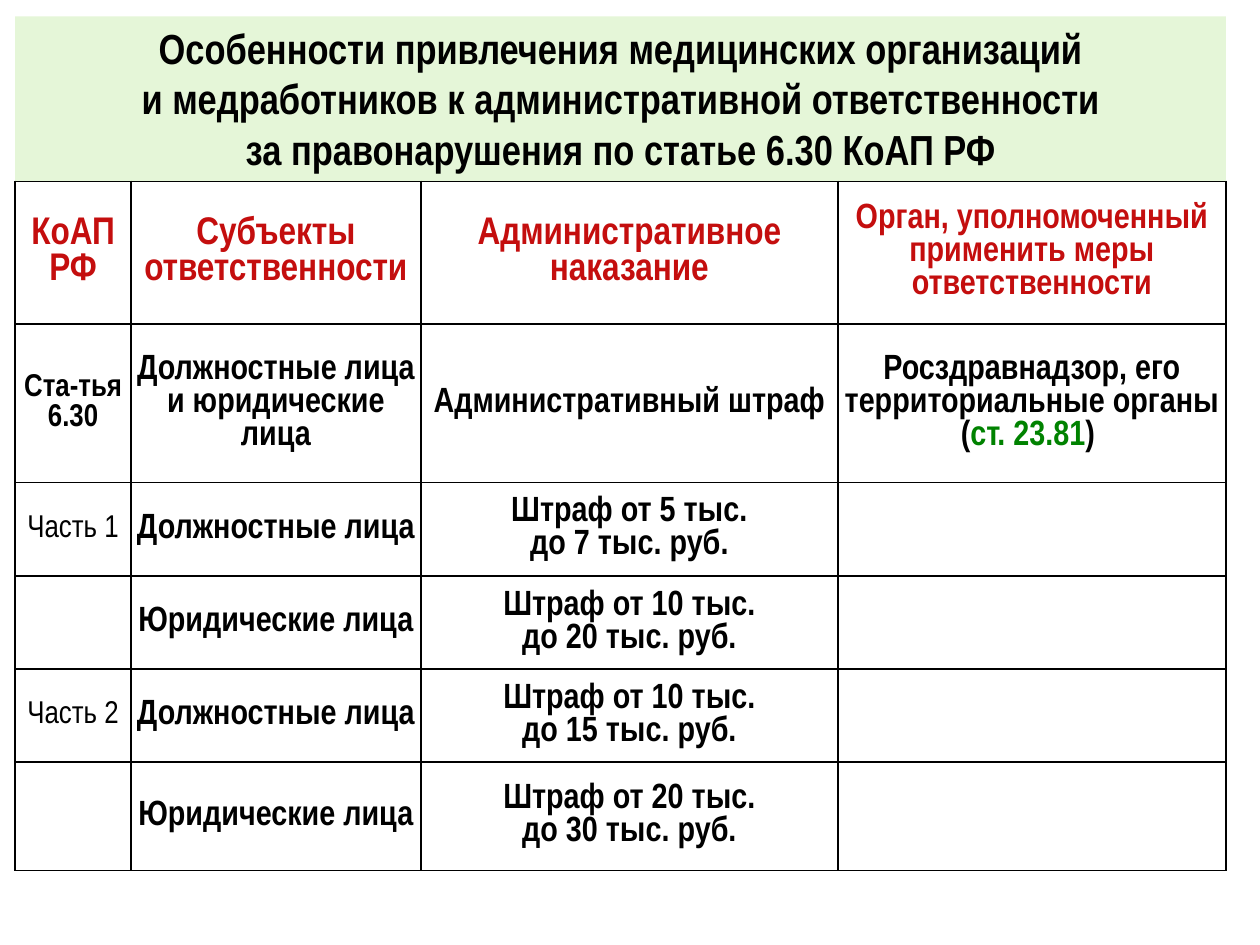
"""Build a slide on administrative liability under article 6.30."""
import dataclasses

import pptx
import pptx.dml.color
import pptx.enum.shapes
import pptx.enum.text
import pptx.oxml
import pptx.oxml.ns
import pptx.util
from pptx.util import Inches


@dataclasses.dataclass(frozen=True)
class Theme:
    """Colours, font and type sizes of the slide."""
    font: str = "Arial Narrow"
    black: str = "000000"
    white: str = "FFFFFF"
    red: str = "C40E0E"
    green: str = "008200"
    banner: str = "E5F6D8"
    title: int = 24
    heading: int = 22
    body: int = 20
    label: int = 18
    border: int = 1


THEME = Theme()
HARD_SPACE = chr(160)
LEFT, WIDTH = 0.12, 9.61
TITLE_TOP, TITLE_HEIGHT = 0.13, 1.31
COLUMN_WIDTHS = [0.92, 2.3, 3.31, 3.08]
ROW_HEIGHTS = [1.13, 1.26, 0.74, 0.74, 0.74, 0.86]
TITLE = ("Особенности привлечения медицинских организаций и~медработников "
         "к~административной ответственности за~правонарушения по статье 6.30 КоАП РФ")
HEADINGS = ["КоАП РФ", "Субъекты ответственности", "Административное наказание",
            "Орган, уполномоченный применить меры ответственности"]
OFFICIALS, COMPANIES = "Должностные лица", "Юридические лица"
AUTHORITY = ["Росздравнадзор, его территориальные органы (", "ст.~23.81", ") "]
ARTICLE = ["Ста-тья 6.30", "Должностные лица и~юридические лица",
           "Административный штраф"]
PENALTIES = [
    ("Часть 1", OFFICIALS, 5, 7),
    ("", COMPANIES, 10, 20),
    ("Часть 2", OFFICIALS, 10, 15),
    ("", COMPANIES, 20, 30),
]


def rgb(value):
    """Return a colour object for a hex string."""
    return pptx.dml.color.RGBColor.from_string(value)


def add_span(para, text):
    """Add a run in which each tilde stands for a no-break space."""
    span = para.add_run()
    span.text = text.replace("~", HARD_SPACE)
    return span


def write(frame, text, size, color=THEME.black, bold=True):
    """Write one centred paragraph and return it."""
    para = frame.paragraphs[0]
    para.alignment = pptx.enum.text.PP_ALIGN.CENTER
    para.font.name = THEME.font
    para.font.size = pptx.util.Pt(size)
    para.font.bold = bold
    para.font.color.rgb = rgb(color)
    if text:
        add_span(para, text)
    return para


def add_title(page):
    """Add the tinted title banner."""
    box = page.shapes.add_shape(
        pptx.enum.shapes.MSO_SHAPE.RECTANGLE, Inches(LEFT), Inches(TITLE_TOP),
        Inches(WIDTH), Inches(TITLE_HEIGHT))
    box.shadow.inherit = False
    box.fill.solid()
    box.fill.fore_color.rgb = rgb(THEME.banner)
    box.line.fill.background()
    frame = box.text_frame
    frame.word_wrap = True
    frame.auto_size = pptx.enum.text.MSO_AUTO_SIZE.SHAPE_TO_FIT_TEXT
    frame.vertical_anchor = pptx.enum.text.MSO_ANCHOR.TOP
    write(frame, TITLE, THEME.title)


def add_borders(cell):
    """Draw a thin solid line on each side of a cell."""
    properties = cell._tc.get_or_add_tcPr()
    for side in ("lnL", "lnR", "lnT", "lnB"):
        properties.append(pptx.oxml.parse_xml(
            f'<a:{side} {pptx.oxml.ns.nsdecls("a")} w="{pptx.util.Pt(THEME.border)}">'
            f'<a:solidFill><a:srgbClr val="{THEME.black}"/></a:solidFill></a:{side}>'))


def format_cell(cell, is_heading):
    """Set the borders, fill, margins and anchor of a cell."""
    add_borders(cell)
    if is_heading:
        cell.fill.solid()
        cell.fill.fore_color.rgb = rgb(THEME.white)
    else:
        cell.fill.background()
    cell.margin_left = cell.margin_right = Inches(0.03)
    cell.margin_top = cell.margin_bottom = Inches(0.03)
    cell.vertical_anchor = pptx.enum.text.MSO_ANCHOR.MIDDLE


def add_grid(page):
    """Add the empty bordered table and return it."""
    table = page.shapes.add_table(
        len(ROW_HEIGHTS), len(COLUMN_WIDTHS), Inches(LEFT),
        Inches(TITLE_TOP + TITLE_HEIGHT), Inches(WIDTH),
        Inches(sum(ROW_HEIGHTS))).table
    table.first_row = table.horz_banding = False
    for column, width in zip(table.columns, COLUMN_WIDTHS):
        column.width = Inches(width)
    for index, (row, height) in enumerate(zip(table.rows, ROW_HEIGHTS)):
        row.height = Inches(height)
        for cell in row.cells:
            format_cell(cell, index == 0)
    return table


def fill_grid(table):
    """Write the headings, the article row and the penalty rows."""
    last = len(HEADINGS) - 1
    for column, text in enumerate(HEADINGS):
        size = THEME.body if column == last else THEME.heading
        write(table.cell(0, column).text_frame, text, size, THEME.red)
    for column, text in enumerate(ARTICLE):
        size = THEME.body if column else THEME.label
        write(table.cell(1, column).text_frame, text, size)
    before, reference, after = AUTHORITY
    para = write(table.cell(1, last).text_frame, before, THEME.body)
    add_span(para, reference).font.color.rgb = rgb(THEME.green)
    add_span(para, after)
    for row, (part, subject, low, high) in enumerate(PENALTIES, start=2):
        fine = f"Штраф от~{low} тыс. до~{high}~тыс.~руб."
        write(table.cell(row, 0).text_frame, part, THEME.label, bold=False)
        write(table.cell(row, 1).text_frame, subject, THEME.body)
        write(table.cell(row, 2).text_frame, fine, THEME.body)


def main():
    """Build and save the deck."""
    deck = pptx.Presentation()
    deck.slide_width, deck.slide_height = Inches(10), Inches(7.5)
    page = deck.slides.add_slide(deck.slide_layouts[6])
    add_title(page)
    fill_grid(add_grid(page))
    deck.save("out.pptx")


if __name__ == "__main__":
    main()
